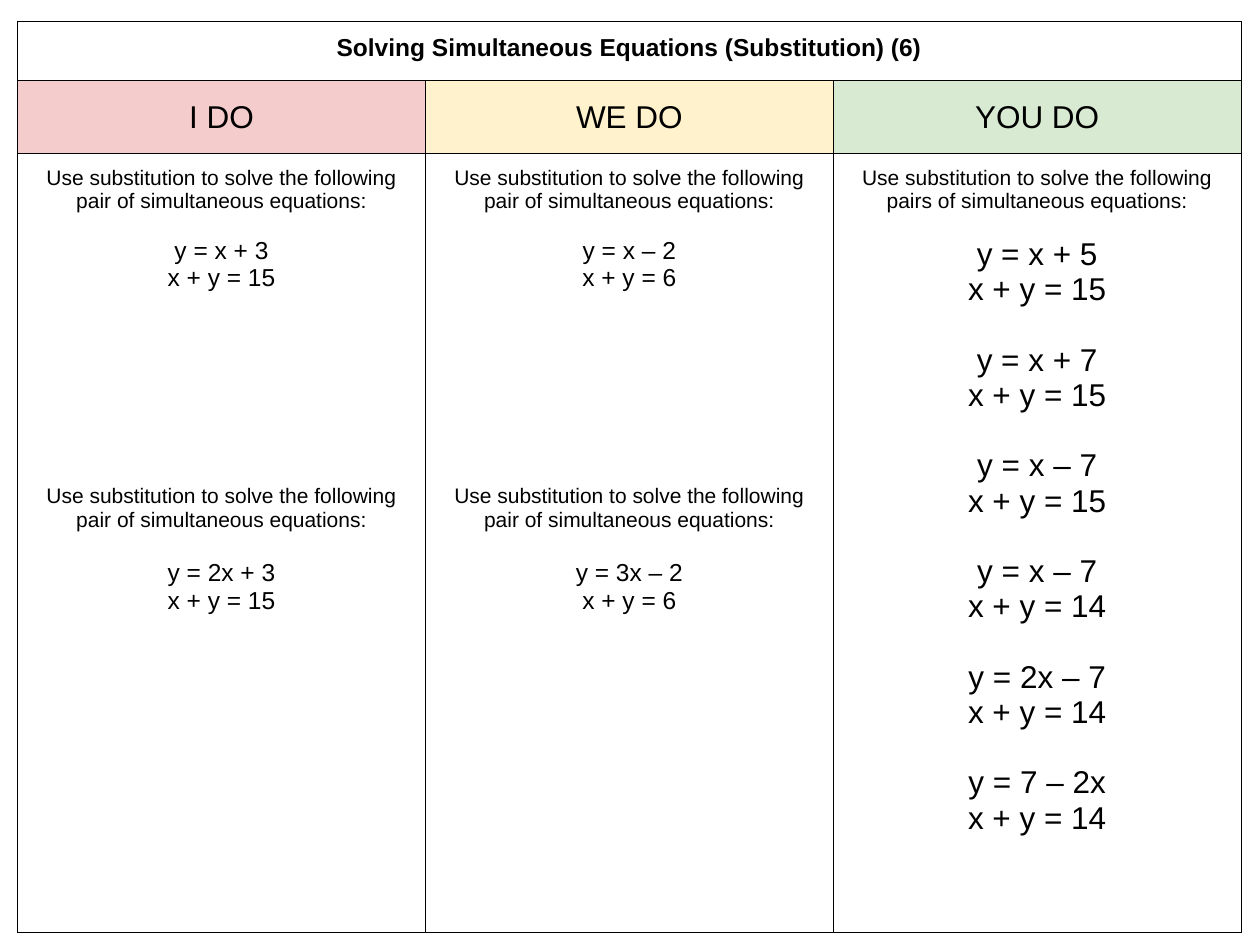
from dataclasses import dataclass

from lxml import etree
from pptx import Presentation
from pptx.dml.color import RGBColor
from pptx.enum import text as t
from pptx.oxml import ns
from pptx.util import Inches, Pt

INK = "000000"
ASK = "Use substitution to solve the following {} of simultaneous equations:"


@dataclass
class Line:
    text: str
    size: int
    gap: float = 0
    bold: bool = False


@dataclass
class Column:
    head: str
    fill: str
    body: list[Line]


def color(code: str) -> RGBColor:
    return RGBColor.from_string(code)


def pair(first: str, total: int, size: int, gap: float) -> list[Line]:
    """One pair of equations, the second always a sum of x and y."""
    return [Line(first, size, gap), Line(f"x + y = {total}", size)]


def lesson(first: str, second: str, total: int) -> list[Line]:
    """Two worked questions, with room for working between them."""
    ask = ASK.format("pair")
    return [Line(ask, 12), *pair(first, total, 14, 13.4),
            Line(ask, 12, 110.3), *pair(second, total, 14, 15.7)]


def drill(tasks: list[tuple[str, int]]) -> list[Line]:
    """A list of practice questions with even gaps."""
    lines = [Line(ASK.format("pairs"), 12)]
    for i, (first, total) in enumerate(tasks):
        lines += pair(first, total, 18, 20.1 if i else 13.4)
    return lines


def edge(cell) -> None:
    """Draw a thin line on all four sides of a cell."""
    props = cell._tc.get_or_add_tcPr()
    for i, side in enumerate("LRTB"):
        line = etree.Element(ns.qn(f"a:ln{side}"), w=str(Pt(0.75)))
        fill = etree.SubElement(line, ns.qn("a:solidFill"))
        etree.SubElement(fill, ns.qn("a:srgbClr"), val=INK)
        props.insert(i, line)


def write(cell, lines: list[Line], anchor=t.MSO_ANCHOR.TOP) -> None:
    cell.vertical_anchor = anchor
    frame = cell.text_frame
    for i, line in enumerate(lines):
        para = frame.add_paragraph() if i else frame.paragraphs[0]
        para.alignment = t.PP_ALIGN.CENTER
        para.space_before = Pt(line.gap)
        run = para.add_run()
        run.text = line.text
        style = {"name": "Arial", "size": Pt(line.size), "bold": line.bold}
        for key, value in style.items():
            setattr(run.font, key, value)
        run.font.color.rgb = color(INK)


COLUMNS = [
    Column("I DO", "F4CCCC", lesson("y = x + 3", "y = 2x + 3", 15)),
    Column("WE DO", "FFF2CC", lesson("y = x – 2", "y = 3x – 2", 6)),
    Column("YOU DO", "D9EAD3", drill([
        ("y = x + 5", 15), ("y = x + 7", 15), ("y = x – 7", 15),
        ("y = x – 7", 14), ("y = 2x – 7", 14), ("y = 7 – 2x", 14)])),
]
ROWS = [0.47, 0.58, 6.18]


def main() -> None:
    deck = Presentation()
    deck.slide_width, deck.slide_height = Inches(10), Inches(7.5)
    slide = deck.slides.add_slide(deck.slide_layouts[6])

    # Plain grid
    table = slide.shapes.add_table(
        len(ROWS), len(COLUMNS), Inches(0.14), Inches(0.17),
        Inches(9.71), Inches(sum(ROWS))).table
    table.first_row = table.horz_banding = False
    for row, height in zip(table.rows, ROWS):
        row.height = Inches(height)
    for cell in table.iter_cells():
        cell.fill.background()
        edge(cell)
        for side in ("left", "right", "top", "bottom"):
            setattr(cell, f"margin_{side}", Inches(0.1))

    # Title across the top
    title = table.cell(0, 0)
    title.merge(table.cell(0, len(COLUMNS) - 1))
    write(title, [Line("Solving Simultaneous Equations (Substitution) (6)",
                       14, bold=True)])

    # Coloured heads and questions
    for i, col in enumerate(COLUMNS):
        head = table.cell(1, i)
        head.fill.solid()
        head.fill.fore_color.rgb = color(col.fill)
        write(head, [Line(col.head, 18)], t.MSO_ANCHOR.MIDDLE)
        write(table.cell(2, i), col.body)

    deck.save("out.pptx")


if __name__ == "__main__":
    main()
